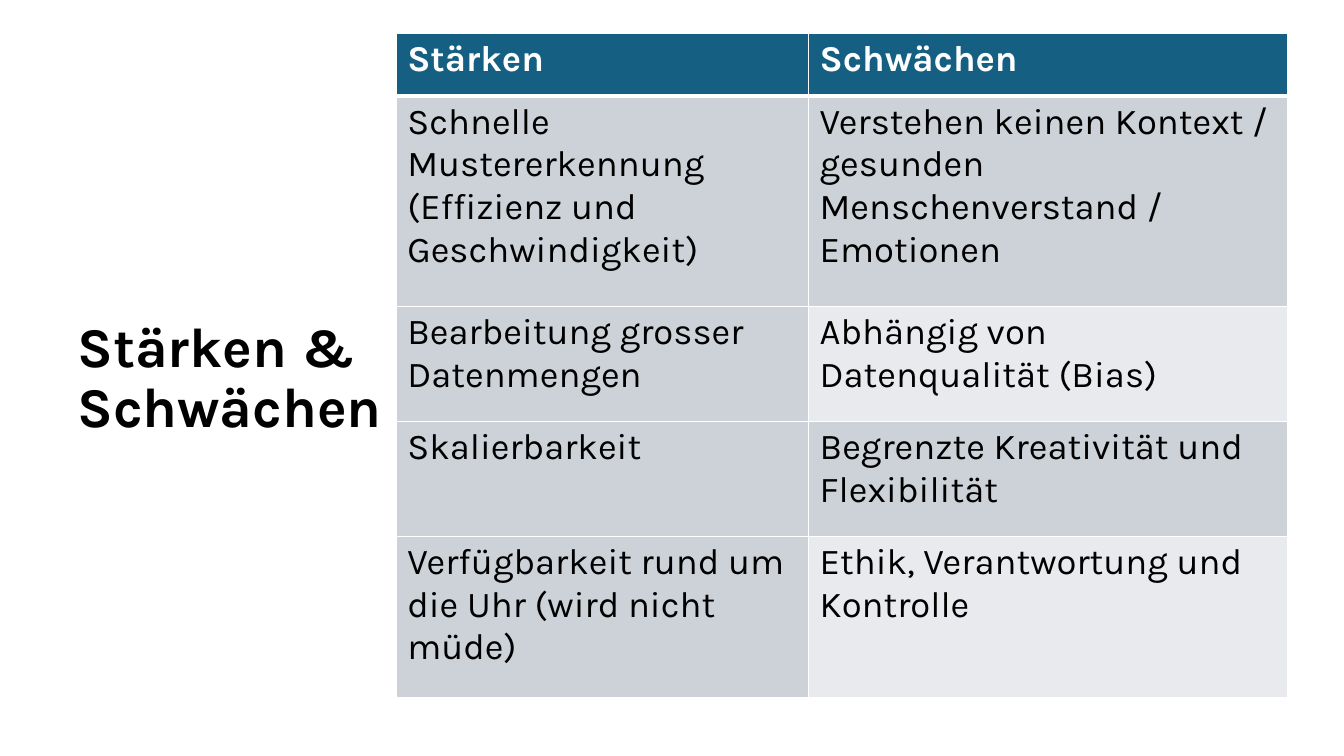
from lxml import etree
from pptx import Presentation
from pptx.dml.color import RGBColor
from pptx.enum.text import MSO_ANCHOR
from pptx.oxml.ns import qn
from pptx.util import Inches, Pt

MIDDLE = MSO_ANCHOR.MIDDLE
TOP = MSO_ANCHOR.TOP
FONT = "Karla"
COLORS = {
    "text": "000000",
    "white": "FFFFFF",
    "header": "156082",
    "band_dark": "CCD2D8",
    "band_light": "E8EAED",
}

TITLE = "Stärken & Schwächen"
ROWS = [
    ("Stärken", "Schwächen"),
    ("Schnelle Mustererkennung (Effizienz und Geschwindigkeit)",
     "Verstehen keinen Kontext / gesunden Menschenverstand / Emotionen"),
    ("Bearbeitung grosser Datenmengen", "Abhängig von Datenqualität (Bias)"),
    ("Skalierbarkeit", "Begrenzte Kreativität und Flexibilität"),
    ("Verfügbarkeit rund um die Uhr (wird nicht müde)",
     "Ethik, Verantwortung und Kontrolle"),
]
COLUMN_WIDTHS = [4.09, 4.75]
ROW_HEIGHTS = [0.62, 2.09, 1.14, 1.14, 1.6]


def write_text(text_frame, text, size, color="text", bold=False, line_spacing=None):
    text_frame.word_wrap = True
    paragraph = text_frame.paragraphs[0]
    paragraph.line_spacing = line_spacing
    run = paragraph.add_run()
    run.text = text
    run.font.name = FONT
    run.font.size = Pt(size)
    run.font.bold = bold
    run.font.color.rgb = RGBColor.from_string(COLORS[color])


def set_borders(cell, **widths):
    """Draw white cell borders; must run before the cell is filled."""
    properties = cell._tc.get_or_add_tcPr()
    for side in ("L", "R", "T", "B"):
        line = etree.SubElement(properties, qn(f"a:ln{side}"),
                                w=str(Pt(widths.get(side, 1))))
        fill = etree.SubElement(line, qn("a:solidFill"))
        etree.SubElement(fill, qn("a:srgbClr"), val=COLORS["white"])


def cell_color(row, column):
    if row == 0:
        return "header"
    # The first column stays dark; the second alternates
    return "band_light" if column == 1 and row % 2 == 0 else "band_dark"


def add_title(slide, left, top, width, height):
    title = slide.shapes.add_textbox(
        Inches(left), Inches(top), Inches(width), Inches(height))
    title.text_frame.vertical_anchor = MIDDLE
    write_text(title.text_frame, TITLE, size=40, bold=True, line_spacing=0.9)


def add_comparison(slide, left, top, width, height):
    table = slide.shapes.add_table(
        len(ROWS), len(COLUMN_WIDTHS),
        Inches(left), Inches(top), Inches(width), Inches(height)).table
    for column, column_width in zip(table.columns, COLUMN_WIDTHS):
        column.width = Inches(column_width)
    for row, row_height in zip(table.rows, ROW_HEIGHTS):
        row.height = Inches(row_height)

    for row_index, texts in enumerate(ROWS):
        is_header = row_index == 0
        for column_index, text in enumerate(texts):
            cell = table.cell(row_index, column_index)
            cell.margin_left = cell.margin_right = Inches(0.11)
            cell.margin_top = cell.margin_bottom = Inches(0.05)
            cell.vertical_anchor = TOP
            # Thick rule between header and body
            set_borders(cell, T=3 if row_index == 1 else 1, B=3 if is_header else 1)
            cell.fill.solid()
            cell.fill.fore_color.rgb = RGBColor.from_string(
                COLORS[cell_color(row_index, column_index)])
            write_text(cell.text_frame, text, size=26, bold=is_header,
                       color="white" if is_header else "text")


def main():
    presentation = Presentation()
    presentation.slide_width = Inches(13.33)
    presentation.slide_height = Inches(7.5)
    slide = presentation.slides.add_slide(presentation.slide_layouts[6])
    add_title(slide, 0.67, 0.6, 3.82, 6.33)
    add_comparison(slide, 3.93, 0.33, sum(COLUMN_WIDTHS), sum(ROW_HEIGHTS))
    presentation.save("out.pptx")


if __name__ == "__main__":
    main()
